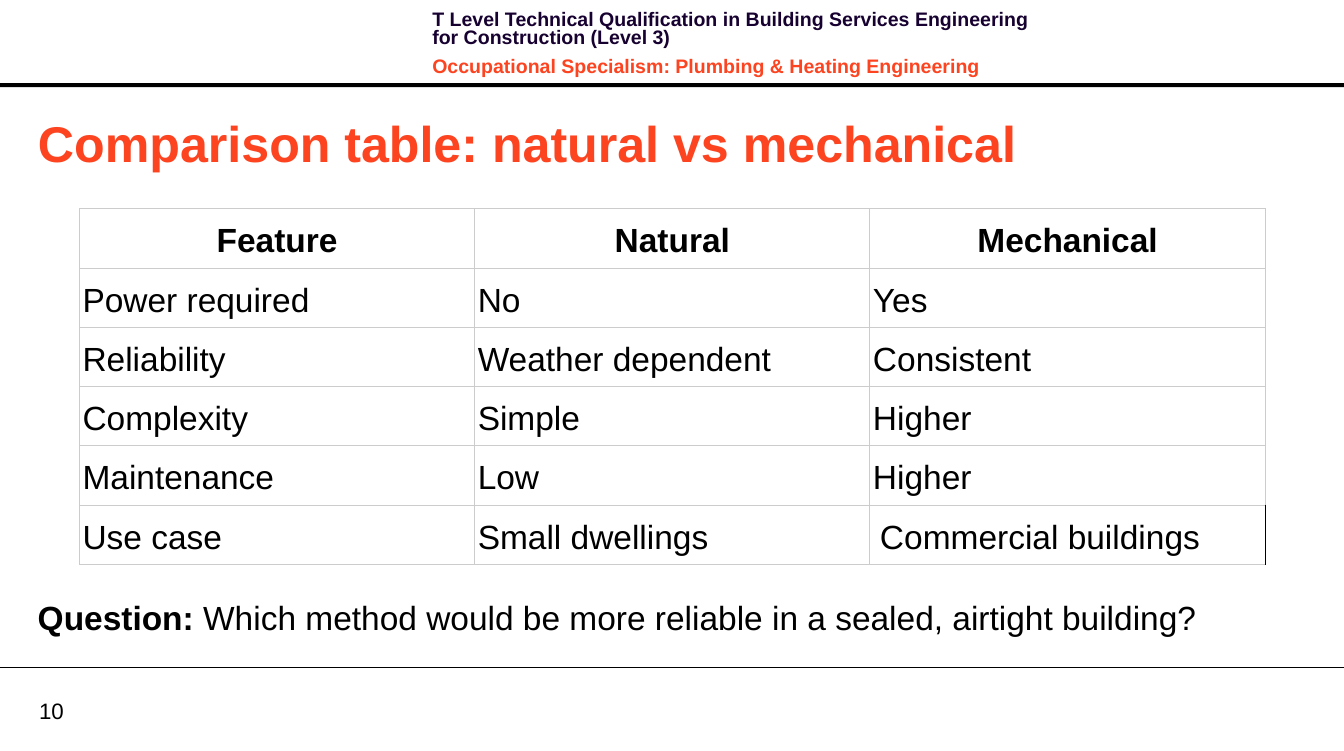
from lxml.etree import SubElement
from pptx import Presentation
from pptx.dml.color import RGBColor
from pptx.enum.shapes import MSO_CONNECTOR as CONN, MSO_SHAPE as SHAPE
from pptx.enum.text import MSO_ANCHOR as ANCHOR, PP_ALIGN as ALIGN
from pptx.oxml import parse_xml
from pptx.oxml.ns import nsdecls, qn
from pptx.util import Pt

BLACK, ORANGE, NAVY, GREY = "000000", "FC4421", "170130", "CCCCCC"
WIDTH, HEIGHT = 964, 538.5
LEFT, CONTENT_W = 20, 916

ROWS = [
    ("Feature", "Natural", "Mechanical"),
    ("Power required", "No", "Yes"),
    ("Reliability", "Weather dependent", "Consistent"),
    ("Complexity", "Simple", "Higher"),
    ("Maintenance", "Low", "Higher"),
    ("Use case", "Small dwellings", "Commercial buildings"),
]


def rgb(color):
    return RGBColor.from_string(color)


class SlideBuilder:
    font = "Arial"

    def __init__(self, prs):
        self.s = prs.slides.add_slide(prs.slide_layouts[5])

    def style(self, r, size, color=BLACK, bold=False):
        r.font.name, r.font.size, r.font.bold = self.font, Pt(size), bold
        r.font.color.rgb = rgb(color)

    def frame(self, tf, insets, anchor=ANCHOR.TOP):
        tf.word_wrap = True
        tf.vertical_anchor = anchor
        tf.margin_left = tf.margin_right = Pt(insets[0])
        tf.margin_top = tf.margin_bottom = Pt(insets[1])

    def title(self, text, x, y, w, h):
        sp = self.s.shapes.title
        sp.left, sp.top, sp.width, sp.height = map(Pt, (x, y, w, h))
        tf = sp.text_frame
        tf.text = text
        self.frame(tf, (7.2, 3.6), ANCHOR.MIDDLE)
        p = tf.paragraphs[0]
        p.alignment = ALIGN.LEFT
        self.style(p.runs[0], 36, ORANGE, True)

    def text(self, paras, x, y, w, h, size, insets=(0, 0), anchor=ANCHOR.TOP,
             spacing=1.0, before=0, after=0):
        """Each paragraph is a list of (text, color, bold) runs."""
        tf = self.s.shapes.add_textbox(*map(Pt, (x, y, w, h))).text_frame
        self.frame(tf, insets, anchor)
        for i, runs in enumerate(paras):
            p = tf.add_paragraph() if i else tf.paragraphs[0]
            p.line_spacing = spacing
            p.space_before = Pt(before if i else 0)
            p.space_after = Pt(after)
            for text, color, bold in runs:
                r = p.add_run()
                r.text = text
                self.style(r, size, color, bold)

    def bar(self, x, y, w, h, color=BLACK):
        sp = self.s.shapes.add_shape(SHAPE.RECTANGLE, *map(Pt, (x, y, w, h)))
        sp.shadow.inherit = False
        sp.fill.solid()
        sp.fill.fore_color.rgb = rgb(color)
        sp.line.fill.background()

    def line(self, x1, y1, x2, y2, width, color=BLACK):
        c = self.s.shapes.add_connector(CONN.STRAIGHT, *map(Pt, (x1, y1, x2, y2)))
        c.line.width = Pt(width)
        c.line.color.rgb = rgb(color)
        SubElement(c._element.spPr, qn("a:effectLst"))

    def borders(self, cell, right=GREY):
        tc_pr = cell._tc.get_or_add_tcPr()
        for i, side in enumerate("LRTB"):
            color = right if side == "R" else GREY
            tc_pr.insert(i, parse_xml(
                f'<a:ln{side} {nsdecls("a")} w="{Pt(0.83)}"><a:solidFill>'
                f'<a:srgbClr val="{color}"/></a:solidFill></a:ln{side}>'))

    def table(self, rows, x, y, w, h, size):
        n_rows, n_cols = len(rows), len(rows[0])
        gf = self.s.shapes.add_table(n_rows, n_cols, *map(Pt, (x, y, w, h)))
        tbl = gf.table
        tbl.horz_banding = False
        for row in tbl.rows:
            row.height = Pt(h / n_rows)
        for i, row in enumerate(rows):
            for j, text in enumerate(row):
                cell = tbl.cell(i, j)
                last = (i, j) == (n_rows - 1, n_cols - 1)
                cell.text = text
                cell.vertical_anchor = ANCHOR.MIDDLE
                cell.margin_left = cell.margin_right = Pt(7.2 if last else 2.2)
                cell.margin_top = cell.margin_bottom = Pt(1.5)
                cell.fill.background()
                self.borders(cell, BLACK if last else GREY)
                p = cell.text_frame.paragraphs[0]
                p.alignment = ALIGN.LEFT if i else ALIGN.CENTER
                p.line_spacing = 1.15
                self.style(p.runs[0], size, bold=i == 0)


def main():
    prs = Presentation()
    prs.slide_width, prs.slide_height = Pt(WIDTH), Pt(HEIGHT)
    b = SlideBuilder(prs)

    # Header
    b.bar(0, 59.7, WIDTH, 2.9)
    b.text([[("T Level Technical Qualification in Building Services Engineering "
              "for Construction (Level 3)", NAVY, True)],
            [("Occupational Specialism: Plumbing & Heating Engineering", ORANGE, True)]],
           303, 5, 458.6, 46, 14, (7.2, 3.6), spacing=Pt(13.1), before=4, after=4)

    # Title, comparison table and question
    b.title("Comparison table: natural vs mechanical", LEFT, 76.3, CONTENT_W, 51)
    b.table(ROWS, 57, 149.7, 850.5, 255, 24)
    b.text([[("Question: ", BLACK, True),
             ("Which method would be more reliable in a sealed, airtight building?",
              BLACK, False)]],
           LEFT, 418.3, CONTENT_W, 58.3, 24, (7.2, 7.2), spacing=1.1, after=12)

    # Footer
    b.line(0, 478.8, WIDTH, 478.8, 0.75)
    b.text([[("10", BLACK, False)]], 28, 499.7, 46, 19.4, 16, anchor=ANCHOR.MIDDLE)

    prs.save("out.pptx")


if __name__ == "__main__":
    main()
